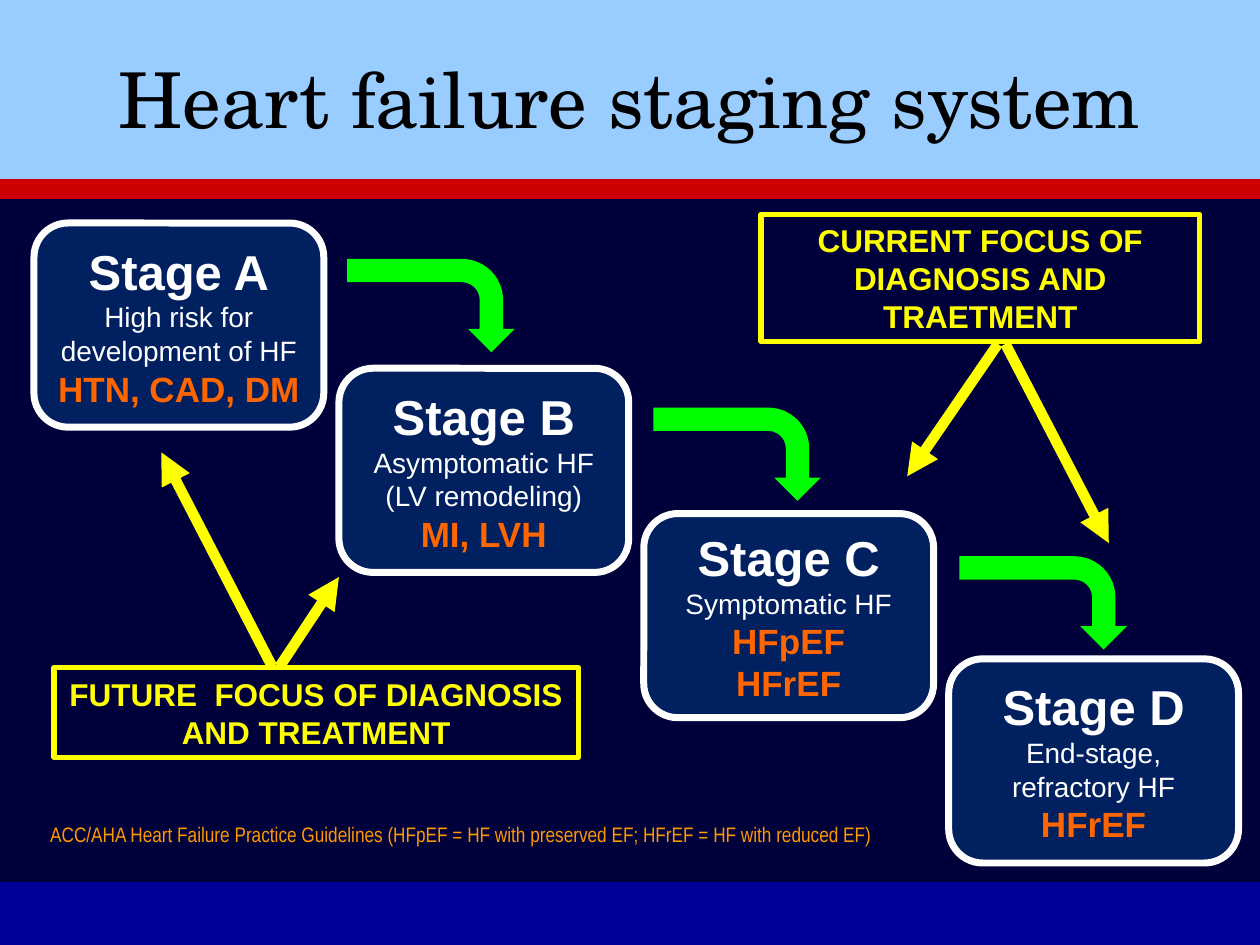
from lxml import etree
from pptx import Presentation
from pptx.dml.color import RGBColor
from pptx.enum.shapes import MSO_CONNECTOR, MSO_SHAPE
from pptx.enum.text import MSO_ANCHOR, PP_ALIGN
from pptx.oxml.ns import qn
from pptx.util import Inches, Pt

RECT = MSO_SHAPE.RECTANGLE
ROUNDED = MSO_SHAPE.ROUNDED_RECTANGLE
BENT_ARROW = MSO_SHAPE.BENT_ARROW
STRAIGHT = MSO_CONNECTOR.STRAIGHT
MIDDLE = MSO_ANCHOR.MIDDLE
LEFT, CENTER = PP_ALIGN.LEFT, PP_ALIGN.CENTER

COLS, ROWS = 100, 75
CELL = Inches(10) / COLS
YELLOW = "FFFF00"

TITLE = {"size": 44, "name": "TeX Gyre Schola", "color": "000000"}
CAPTION = {"size": 12, "name": "Arial Narrow", "color": "FF9900"}
STAGE = {"size": 28, "name": "Arial", "color": "FFFFFF", "bold": True}
DETAIL = {"size": 16, "name": "Arial", "color": "FFFFFF", "bold": False}
EXAMPLE = {"size": 20, "name": "Arial", "color": "FF6600", "bold": True}
FOCUS = {"size": 18, "name": "Arial", "color": YELLOW, "bold": True}

BANDS = [
    (0, 15.8, "CC0000"),
    (0, 14.2, "99CCFF"),
    (15.8, 54.2, "00003A"),
]
STAGES = [
    ("Stage A", "High risk for development of HF", ["HTN, CAD, DM"]),
    ("Stage B", "Asymptomatic HF (LV remodeling)", ["MI, LVH"]),
    ("Stage C", "Symptomatic HF", ["HFpEF", "HFrEF"]),
    ("Stage D", "End-stage, refractory HF", ["HFrEF"]),
]
CURRENT_POINTERS = [(79.2, 27.3, 72, 37.8), (79.8, 27.3, 88, 43.1)]
FUTURE_POINTERS = [(22.2, 52.9, 26.9, 45.8), (21.6, 52.9, 12.8, 35.9)]


def rgb(value):
    return RGBColor.from_string(value)


def grid(*cells):
    return [round(c * CELL) for c in cells]


def write(sp, lines, align=CENTER, wrap=True, anchor=MIDDLE):
    tf = sp.text_frame
    tf.word_wrap = wrap
    tf.vertical_anchor = anchor
    for i, (text, style) in enumerate(lines):
        p = tf.paragraphs[0] if i == 0 else tf.add_paragraph()
        p.alignment = align
        r = p.add_run()
        r.text = text
        for key, value in style.items():
            if key == "color":
                r.font.color.rgb = rgb(value)
            else:
                setattr(r.font, key, Pt(value) if key == "size" else value)


def add_box(s, kind, box, fill=None, line=None, width=0):
    sp = s.shapes.add_shape(kind, *grid(*box))
    sp.shadow.inherit = False
    if fill:
        sp.fill.solid()
        sp.fill.fore_color.rgb = rgb(fill)
    else:
        sp.fill.background()
    if line:
        sp.line.color.rgb = rgb(line)
        sp.line.width = Pt(width)
    else:
        sp.line.fill.background()
    return sp


def add_text(s, box, text, style, **layout):
    write(s.shapes.add_textbox(*grid(*box)), [(text, style)], **layout)


def add_stage(s, step, name, detail, examples):
    box = (2.7 + 24.2 * step, 17.7 + 11.53 * step, 23, 16.2)
    sp = add_box(s, ROUNDED, box, "002060", "FFFFFF", 4)
    write(sp, [(name, STAGE), (detail, DETAIL)] + [(e, EXAMPLE) for e in examples])


def add_step_arrow(s, step):
    box = (30.5 + 24.3 * step, 17.6 + 11.8 * step, 7.4, 13.3)
    sp = add_box(s, BENT_ARROW, box, "00FF00")
    sp.rotation = 90
    sp.adjustments[3] = 0.44


def add_pointer(s, ends):
    line = s.shapes.add_connector(STRAIGHT, *grid(*ends))
    line.line.color.rgb = rgb(YELLOW)
    line.line.width = Pt(6)
    ln = line.line._get_or_add_ln()
    etree.SubElement(ln, qn("a:tailEnd"), type="triangle")
    etree.SubElement(line._element.spPr, qn("a:effectLst"))


def add_focus(s, box, lines, wrap, pointers):
    for ends in pointers:
        add_pointer(s, ends)
    sp = add_box(s, RECT, box, line=YELLOW, width=3)
    write(sp, [(text, FOCUS) for text in lines], wrap=wrap)


def main():
    prs = Presentation()
    prs.slide_width, prs.slide_height = grid(COLS, ROWS)
    s = prs.slides.add_slide(prs.slide_layouts[6])
    s.background.fill.solid()
    s.background.fill.fore_color.rgb = rgb("000099")

    for top, height, color in BANDS:
        add_box(s, RECT, (0, top, COLS, height), color)
    add_text(s, (5, 1.5, 90, 12.5), "Heart failure staging system", TITLE)
    add_text(s, (3, 64.7, 95, 3),
             "ACC/AHA Heart Failure Practice Guidelines "
             "(HFpEF = HF with preserved EF; HFrEF = HF with reduced EF)",
             CAPTION, align=LEFT, anchor=MSO_ANCHOR.TOP)

    for step, stage in enumerate(STAGES):
        add_stage(s, step, *stage)
    for step in range(len(STAGES) - 1):
        add_step_arrow(s, step)

    add_focus(s, (60.4, 17, 34.8, 10.1),
              ["CURRENT FOCUS OF DIAGNOSIS AND TRAETMENT"], True, CURRENT_POINTERS)
    add_focus(s, (4.3, 53, 41.6, 7.1),
              ["FUTURE  FOCUS OF DIAGNOSIS", "AND TREATMENT"], False, FUTURE_POINTERS)
    prs.save("out.pptx")


if __name__ == "__main__":
    main()
